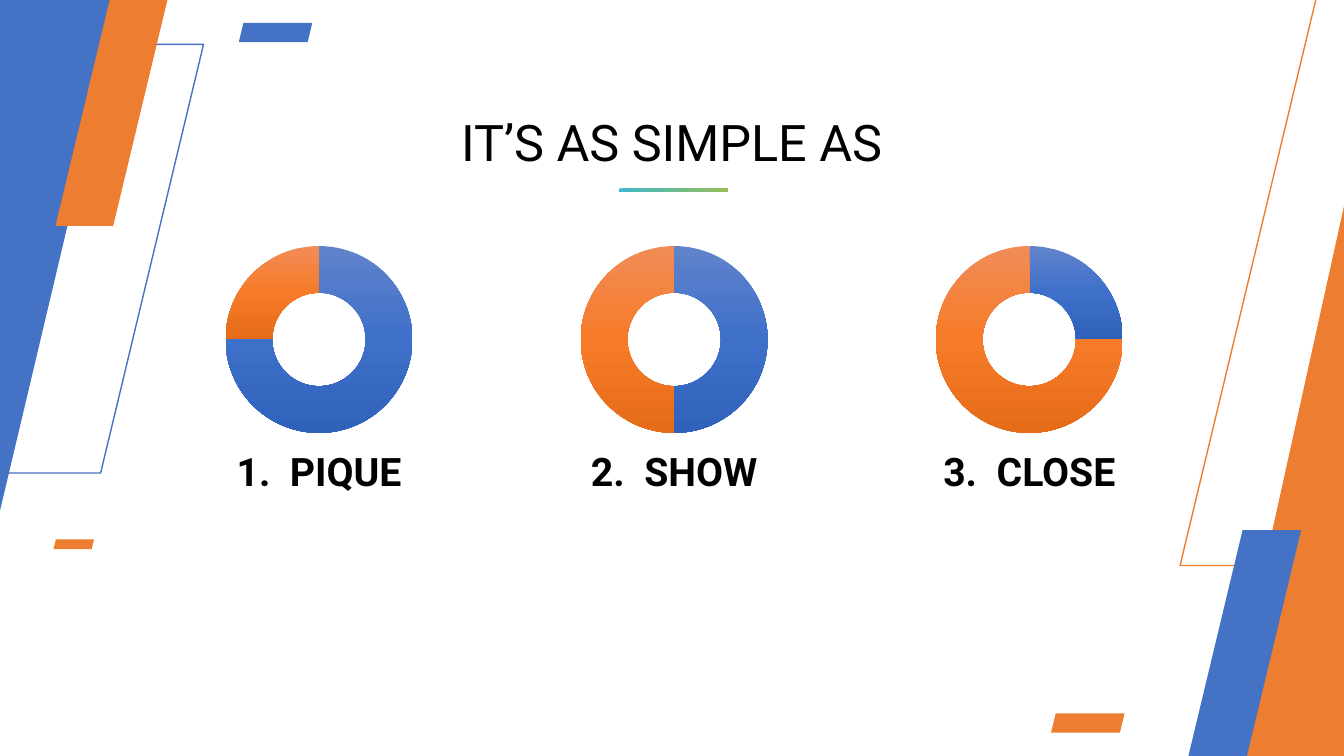
import lxml.etree
import pptx
import pptx.chart.data
import pptx.dml.color
import pptx.enum.chart
import pptx.enum.shapes
import pptx.enum.text
import pptx.oxml.ns
import pptx.util
from pptx.util import Cm

BLUE, ORANGE, BLACK = "4472C4", "ED7D31", "000000"
BLUE_SHADES = ["6183CB", "3E70CA", "3062BB"]
ORANGE_SHADES = ["F18C57", "F67B28", "E56C19"]
BAR_SHADES = ["3EB8C9", "97BE58"]
SLANT = 0.24  # sideways shift of a band per unit of height

# Label, blue share, orange share
STEPS = [("1.  PIQUE", 75, 25), ("2.  SHOW", 50, 50), ("3.  CLOSE", 25, 75)]
FIRST_CENTER, STEP_GAP = 8.04, 8.95


def color(value):
    return pptx.dml.color.RGBColor.from_string(value)


def paint(shape, fill=None, line=None):
    shape.shadow.inherit = False
    if fill:
        shape.fill.solid()
        shape.fill.fore_color.rgb = color(fill)
    else:
        shape.fill.background()
    if line:
        shape.line.color.rgb = color(line)
        shape.line.width = pptx.util.Pt(1)
    else:
        shape.line.fill.background()


def paint_gradient(fill, shades, angle):
    """Spread the shades evenly; angle is clockwise in degrees."""
    name = pptx.oxml.ns.qn
    fill.gradient()
    gradient = fill._xPr.find(name("a:gradFill"))
    stops = gradient.find(name("a:gsLst"))
    for stop in list(stops):
        stops.remove(stop)
    for index, shade in enumerate(shades):
        position = index * 100000 // (len(shades) - 1)
        stop = lxml.etree.SubElement(stops, name("a:gs"), pos=str(position))
        lxml.etree.SubElement(stop, name("a:srgbClr"), val=shade)
    gradient.find(name("a:lin")).set("ang", str(angle * 60000))


def add_polygon(page, points, fill=None, line=None):
    corners = [(Cm(x), Cm(y)) for x, y in points]
    builder = page.shapes.build_freeform(*corners[0], scale=1.0)
    builder.add_line_segments(corners[1:], close=True)
    paint(builder.convert_to_shape(), fill, line)


def add_band(page, left, top, width, height, fill=None, line=None):
    shift, right, bottom = SLANT * height, left + width, top + height
    points = [(left, bottom), (left + shift, top), (right, top), (right - shift, bottom)]
    add_polygon(page, points, fill, line)


def add_corner(page, left, top, width, height, fill):
    kind = pptx.enum.shapes.MSO_SHAPE.RIGHT_TRIANGLE
    corner = page.shapes.add_shape(kind, Cm(left), Cm(top), Cm(width), Cm(height))
    corner.element.spPr.xfrm.set("flipH", "1")
    paint(corner, fill)


def add_bar(page, left, top, width, height):
    kind = pptx.enum.shapes.MSO_SHAPE.ROUNDED_RECTANGLE
    bar = page.shapes.add_shape(kind, Cm(left), Cm(top), Cm(width), Cm(height))
    bar.adjustments[0] = 0.24
    paint(bar)
    paint_gradient(bar.fill, BAR_SHADES, 0)


def write(box, text, size, bold=False):
    frame = box.text_frame
    frame.text = text
    frame.word_wrap = True
    frame.auto_size = pptx.enum.text.MSO_AUTO_SIZE.NONE
    frame.vertical_anchor = pptx.enum.text.MSO_ANCHOR.TOP
    para = frame.paragraphs[0]
    para.alignment = pptx.enum.text.PP_ALIGN.CENTER
    font = para.runs[0].font
    font.name, font.size, font.bold = "Roboto", pptx.util.Pt(size), bold
    font.color.rgb = color(BLACK)


def set_title(page, text, left, top, width, height):
    title = page.shapes.title
    title.left, title.top = Cm(left), Cm(top)
    title.width, title.height = Cm(width), Cm(height)
    write(title, text, 36)


def add_label(page, text, center):
    width = 6.07
    box = page.shapes.add_textbox(Cm(center - width / 2), Cm(11.15), Cm(width), Cm(2.26))
    write(box, text, 28, bold=True)


def add_ring(page, shares, center):
    data = pptx.chart.data.CategoryChartData()
    data.categories = ["1", "2"]
    data.add_series("Series 1", shares)
    width = 6.78
    chart = page.shapes.add_chart(
        pptx.enum.chart.XL_CHART_TYPE.DOUGHNUT,
        Cm(center - width / 2), Cm(5.85), Cm(width), Cm(5.41), data).chart
    chart.has_legend = False
    chart.has_title = False
    chart.font.name, chart.font.size = "Calibri", pptx.util.Pt(10)
    chart.font.color.rgb = color(BLACK)
    plot = chart.plots[0]
    plot.vary_by_categories = True
    plot._element.find(pptx.oxml.ns.qn("c:holeSize")).set("val", "75")
    for index, shades in enumerate([BLUE_SHADES, ORANGE_SHADES]):
        look = plot.series[0].points[index].format
        paint_gradient(look.fill, shades, 90)
        look.line.fill.background()


def main():
    deck = pptx.Presentation()
    deck.slide_width, deck.slide_height = Cm(33.87), Cm(19.05)
    page = deck.slides.add_slide(deck.slide_layouts[5])

    # Small dashes
    add_band(page, 1.35, 13.59, 1.02, 0.25, fill=ORANGE)
    add_band(page, 6.02, 0.58, 1.85, 0.48, fill=BLUE)
    add_band(page, 26.49, 17.98, 1.85, 0.48, fill=ORANGE)

    # Left decoration
    add_polygon(page, [(-0.03, 0), (-0.08, 13.21), (3.05, 0)], fill=BLUE)
    add_band(page, -0.28, 1.12, 5.41, 10.8, line=BLUE)
    add_band(page, 1.4, 0, 2.82, 5.69, fill=ORANGE)

    # Right decoration
    add_corner(page, 30.81, 5.16, 3.07, 13.89, ORANGE)
    add_band(page, 29.74, -0.69, 7.47, 14.94, line=ORANGE)
    add_band(page, 29.95, 13.36, 2.84, 5.69, fill=BLUE)

    # Heading
    set_title(page, "IT’S AS SIMPLE AS", 9.55, 2.67, 14.76, 2.79)
    add_bar(page, 15.6, 4.75, 2.74, 0.1)

    # Three steps
    for index, (label, *shares) in enumerate(STEPS):
        center = FIRST_CENTER + index * STEP_GAP
        add_ring(page, shares, center)
        add_label(page, label, center)

    deck.save("out.pptx")


if __name__ == "__main__":
    main()
